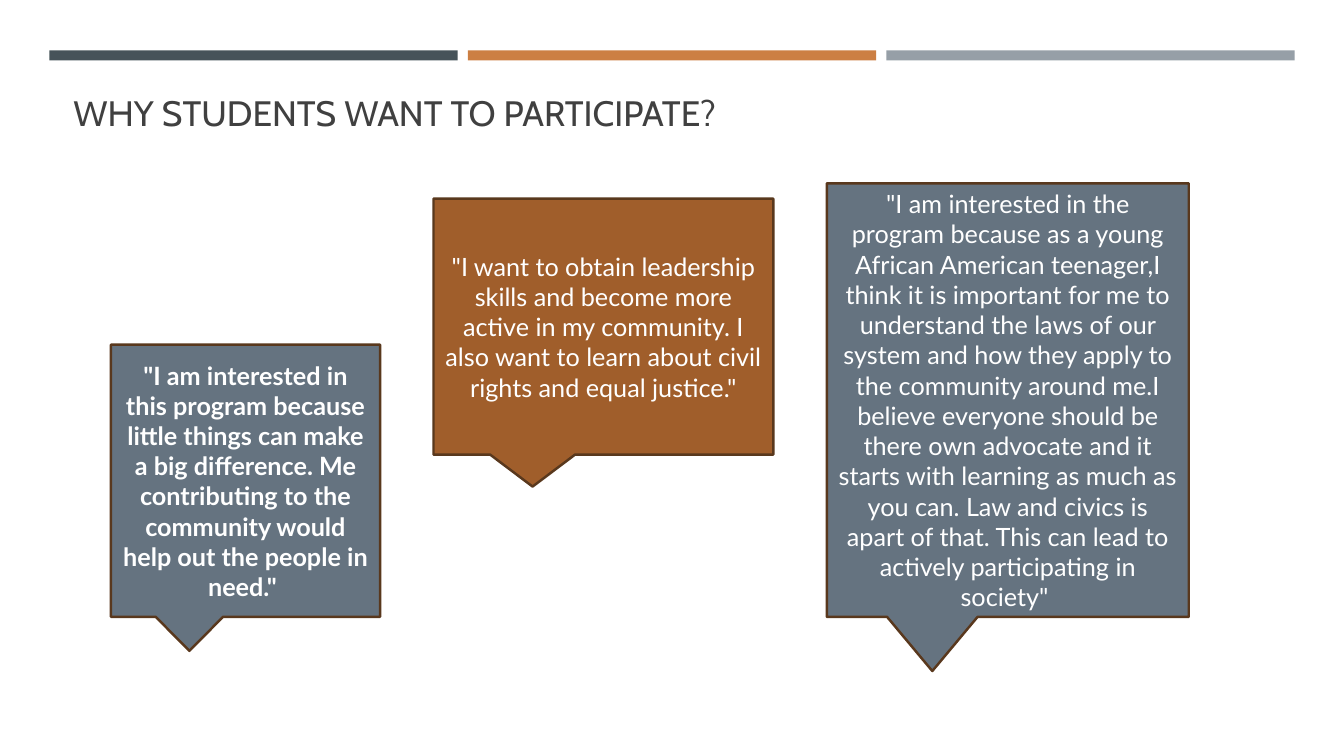
from pptx import Presentation
from pptx.dml.color import RGBColor
from pptx.enum.shapes import MSO_SHAPE
from pptx.enum.text import MSO_ANCHOR, PP_ALIGN
from pptx.util import Inches, Pt

RECT = MSO_SHAPE.RECTANGLE
BUBBLE = MSO_SHAPE.RECTANGULAR_CALLOUT
MIDDLE = MSO_ANCHOR.MIDDLE
BOTTOM = MSO_ANCHOR.BOTTOM
LEFT = PP_ALIGN.LEFT
CENTER = PP_ALIGN.CENTER

COLORS = {
    "dark": "465359",
    "orange": "CC7F43",
    "gray": "969FA7",
    "slate": "657380",
    "rust": "A05E2B",
    "edge": "59381D",
    "title": "404040",
    "white": "FFFFFF",
}

QUOTES = [
    ((1.1, 3.42, 2.67, 2.7), "slate", True,
     '"I am interested in this program because little things can make a big '
     'difference. Me contributing to the community would help out the people '
     'in need." '),
    ((4.3, 1.97, 3.37, 2.54), "rust", False,
     '"I want to obtain leadership skills and become more active in my '
     'community. I also want to learn about civil rights and equal justice."'),
    ((8.2, 1.82, 3.59, 4.3), "slate", False,
     '"I am interested in the program because as a young African American '
     'teenager,I think it is important for me to understand the laws of our '
     'system and how they apply to the community around me.I believe everyone '
     'should be there own advocate and it starts with learning as much as you '
     'can. Law and civics is apart of that. This can lead to actively '
     'participating in society" '),
]


def color(name):
    """Return the named colour."""
    return RGBColor.from_string(COLORS[name])


def block(slide, kind, box, fill):
    """Add a filled shape without line or shadow."""
    shape = slide.shapes.add_shape(kind, *map(Inches, box))
    shape.shadow.inherit = False
    shape.fill.solid()
    shape.fill.fore_color.rgb = color(fill)
    shape.line.fill.background()
    return shape


def write(shape, text, font, size, ink, align, anchor, bold=False):
    """Put one wrapped run of text into a shape."""
    frame = shape.text_frame
    frame.word_wrap = True
    frame.vertical_anchor = anchor
    para = frame.paragraphs[0]
    para.alignment = align
    run = para.add_run()
    run.text = text
    run.font.name = font
    run.font.size = Pt(size)
    run.font.bold = bold
    run.font.color.rgb = color(ink)


def stripes(slide, box):
    """Split the box into three coloured bars with equal gaps."""
    left, top, width, height = box
    gap = 0.1
    names = ["dark", "orange", "gray"]
    bar = (width - gap * (len(names) - 1)) / len(names)
    for i, name in enumerate(names):
        block(slide, RECT, (left + i * (bar + gap), top, bar, height), name)


def heading(slide, box):
    """Add the slide title."""
    shape = slide.shapes.add_textbox(*map(Inches, box))
    write(shape, "WHY STUDENTS WANT TO PARTICIPATE?", "Cabin", 25.2,
          "title", LEFT, BOTTOM)


def quote(slide, box, fill, bold, text):
    """Add a speech bubble with a student's words."""
    shape = block(slide, BUBBLE, box, fill)
    shape.line.color.rgb = color("edge")
    shape.line.width = Pt(1.75)
    write(shape, text, "Lato", 18, "white", CENTER, MIDDLE, bold)


def main():
    """Build and save the slide."""
    deck = Presentation()
    deck.slide_width = Inches(13.33)
    deck.slide_height = Inches(7.5)
    slide = deck.slides.add_slide(deck.slide_layouts[6])
    stripes(slide, (0.49, 0.5, 12.35, 0.1))
    heading(slide, (0.63, 0.8, 12.06, 0.57))
    for item in QUOTES:
        quote(slide, *item)
    deck.save("out.pptx")


if __name__ == "__main__":
    main()
